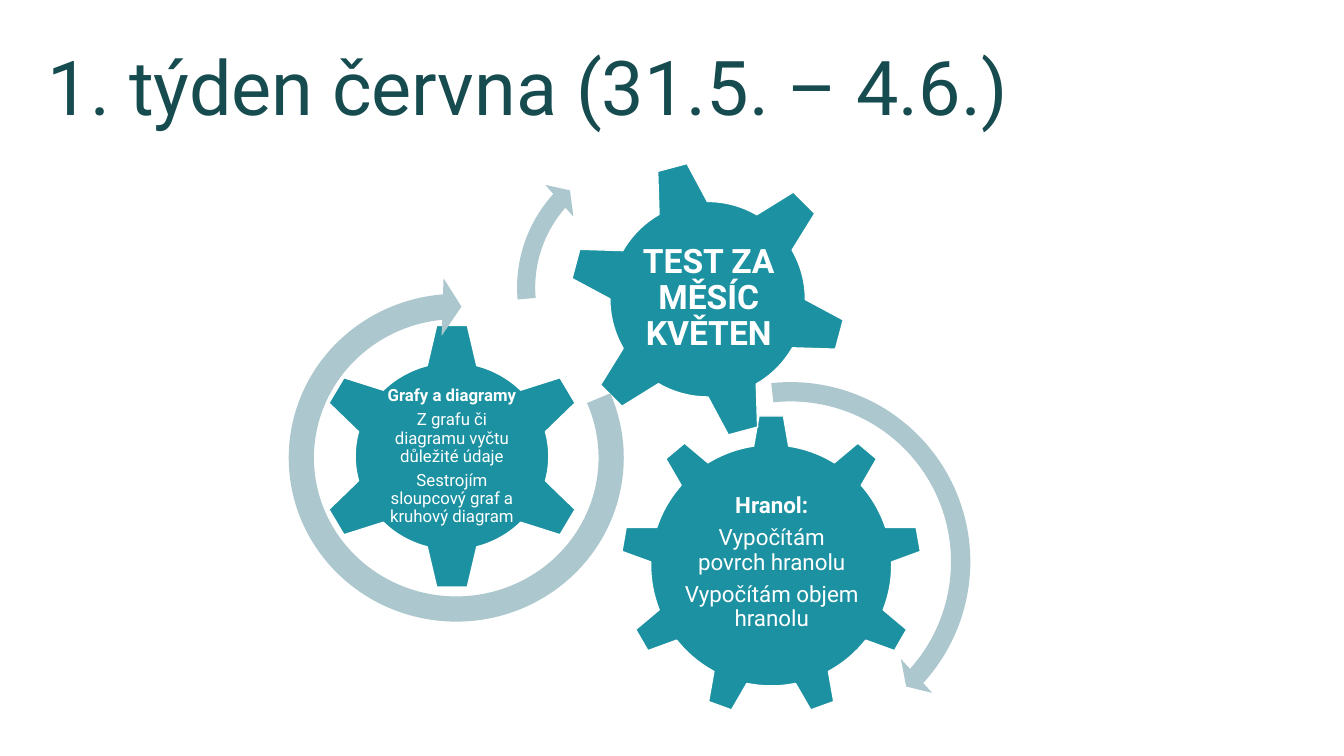
"""Build the slide with the weekly plan shown as three interlocking gears."""
from dataclasses import dataclass

import pptx
import pptx.dml.color
import pptx.enum.shapes
import pptx.enum.text
import pptx.shapes.autoshape
import pptx.shapes.group
import pptx.text.text
import pptx.util

RGBColor = pptx.dml.color.RGBColor
MSO_SHAPE = pptx.enum.shapes.MSO_SHAPE
MSO_ANCHOR = pptx.enum.text.MSO_ANCHOR
PP_ALIGN = pptx.enum.text.PP_ALIGN

EMU_PER_PX = 9525
FONT = "Roboto"
TITLE_COLOR = RGBColor(0x16, 0x4B, 0x4F)
GEAR_COLOR = RGBColor(0x1B, 0x91, 0xA1)
ARROW_COLOR = RGBColor(0xAC, 0xC7, 0xCD)
WHITE = RGBColor(0xFF, 0xFF, 0xFF)

Box = tuple[int, int, int, int]


@dataclass(frozen=True)
class Gear:
    """A gear wheel with its label; the first line is bold."""

    kind: MSO_SHAPE
    box: Box
    label_box: Box
    lines: tuple[str, ...]
    size: int
    inset: int = 2
    rotation: int = 0


@dataclass(frozen=True)
class TurnArrow:
    """A circular arrow around a gear."""

    box: Box
    adjustments: tuple[float, ...]
    rotation: int = 0


GEARS = (
    Gear(MSO_SHAPE.GEAR_9, (591, 395, 287, 287), (649, 462, 172, 148),
         ("Hranol:", "Vypočítám povrch hranolu", "Vypočítám objem hranolu"), 16),
    Gear(MSO_SHAPE.GEAR_6, (300, 307, 261, 255), (365, 372, 131, 126),
         ("Grafy a diagramy", "Z grafu či diagramu vyčtu důležité údaje",
          "Sestrojím sloupcový graf a kruhový diagram"), 12),
    Gear(MSO_SHAPE.GEAR_6, (541, 152, 266, 266), (600, 210, 150, 149),
         ("TEST ZA MĚSÍC KVĚTEN",), 24, inset=3, rotation=345),
)

ARROWS = (
    TurnArrow((569, 351, 368, 368), (0.05, 2.99, 25.32, 158.28, 0.06)),
    TurnArrow((263, 261, 343, 350), (0.07, 4.3, 104.89, 148.38, 0.08), rotation=90),
    TurnArrow((481, 130, 288, 288), (0.06, 3.94, 133.14, 105.08, 0.07)),
)


def px(length: int) -> pptx.util.Emu:
    """Turn pixels into EMU."""
    return pptx.util.Emu(length * EMU_PER_PX)


def write_text(paragraph: pptx.text.text._Paragraph, text: str, *, size: int,
               color: RGBColor, bold: bool = False,
               align: PP_ALIGN = PP_ALIGN.LEFT, space_after: float = 0) -> None:
    """Put formatted text into a paragraph."""
    paragraph.alignment = align
    paragraph.line_spacing = 0.9
    paragraph.space_before = pptx.util.Pt(0)
    paragraph.space_after = pptx.util.Pt(space_after)
    run = paragraph.add_run()
    run.text = text
    run.font.name = FONT
    run.font.size = pptx.util.Pt(size)
    run.font.bold = bold
    run.font.color.rgb = color


def add_filled_shape(group: pptx.shapes.group.GroupShape, kind: MSO_SHAPE, box: Box,
                     color: RGBColor, rotation: int) -> pptx.shapes.autoshape.Shape:
    """Add a flat preset shape without an outline."""
    shape = group.shapes.add_shape(kind, *map(px, box))
    shape.shadow.inherit = False
    shape.rotation = rotation
    shape.fill.solid()
    shape.fill.fore_color.rgb = color
    shape.line.fill.background()
    return shape


def add_gear(group: pptx.shapes.group.GroupShape, gear: Gear) -> None:
    """Draw a gear and its upright label."""
    shape = add_filled_shape(group, gear.kind, gear.box, GEAR_COLOR, gear.rotation)
    shape.line.color.rgb = WHITE
    shape.line.width = pptx.util.Pt(1)

    label = group.shapes.add_textbox(*map(px, gear.label_box))
    frame = label.text_frame
    frame.word_wrap = True
    frame.vertical_anchor = MSO_ANCHOR.MIDDLE
    frame.margin_left = frame.margin_right = px(gear.inset)
    frame.margin_top = frame.margin_bottom = px(gear.inset)
    for index, line in enumerate(gear.lines):
        paragraph = frame.add_paragraph() if index else frame.paragraphs[0]
        write_text(paragraph, line, size=gear.size, color=WHITE, bold=index == 0,
                   align=PP_ALIGN.CENTER, space_after=gear.size * 0.35)


def add_arrow(group: pptx.shapes.group.GroupShape, arrow: TurnArrow) -> None:
    """Draw a circular arrow."""
    shape = add_filled_shape(group, MSO_SHAPE.CIRCULAR_ARROW, arrow.box,
                             ARROW_COLOR, arrow.rotation)
    for index, value in enumerate(arrow.adjustments):
        shape.adjustments[index] = value


def main() -> None:
    """Build and save the presentation."""
    presentation = pptx.Presentation()
    presentation.slide_width = px(1280)
    presentation.slide_height = px(720)
    slide = presentation.slides.add_slide(presentation.slide_layouts[5])

    title = slide.shapes.title
    title.left, title.top, title.width, title.height = map(px, (36, 12, 1005, 118))
    title.text_frame.auto_size = pptx.enum.text.MSO_AUTO_SIZE.NONE
    title.text_frame.vertical_anchor = MSO_ANCHOR.BOTTOM
    write_text(title.text_frame.paragraphs[0], "1. týden června (31.5. – 4.6.)",
               size=54, color=TITLE_COLOR)

    group = slide.shapes.add_group_shape()
    for gear in GEARS:
        add_gear(group, gear)
    for arrow in ARROWS:
        add_arrow(group, arrow)

    presentation.save("out.pptx")


if __name__ == "__main__":
    main()
